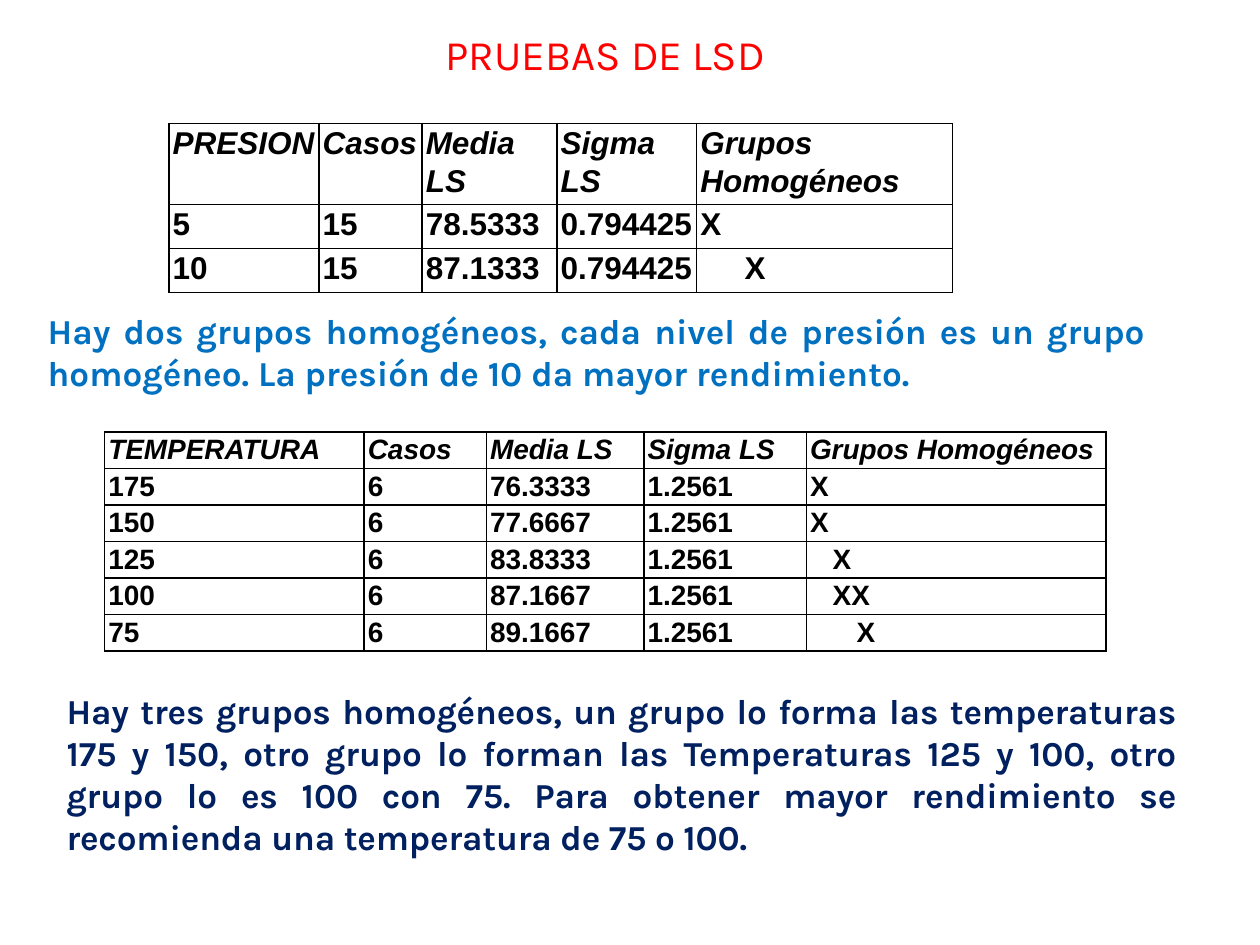
from lxml.etree import SubElement
from pptx import Presentation
from pptx.dml.color import RGBColor
from pptx.enum.text import MSO_ANCHOR, PP_ALIGN
from pptx.oxml.ns import qn
from pptx.util import Inches, Pt

BLACK = RGBColor(0x00, 0x00, 0x00)
RED = RGBColor(0xFF, 0x00, 0x00)
BLUE = RGBColor(0x00, 0x70, 0xC0)
NAVY = RGBColor(0x00, 0x20, 0x60)


def write_text(tf, text, size, color=BLACK, font="Karla", bold=False, italic=False,
               align=PP_ALIGN.LEFT, line_spacing=None, spacing=0):
    tf.word_wrap = True
    p = tf.paragraphs[0]
    p.alignment = align
    p.line_spacing = line_spacing
    r = p.add_run()
    r.text = text
    r.font.name = font
    r.font.size = Pt(size)
    r.font.bold = bold
    r.font.italic = italic
    r.font.color.rgb = color
    if spacing:
        r.font._element.set("spc", str(spacing))


def set_borders(cell):
    tcPr = cell._tc.get_or_add_tcPr()
    for side in ("a:lnL", "a:lnR", "a:lnT", "a:lnB"):
        ln = SubElement(tcPr, qn(side), w=str(Pt(1)))
        fill = SubElement(ln, qn("a:solidFill"))
        SubElement(fill, qn("a:srgbClr"), val=str(BLACK))


prs = Presentation()
prs.slide_width = Inches(10)
prs.slide_height = Inches(7.5)
s = prs.slides.add_slide(prs.slide_layouts[5])

title = s.shapes.title
title.left, title.top = Inches(1.38), Inches(0.18)
title.width, title.height = Inches(6.85), Inches(0.5)
title.text_frame.vertical_anchor = MSO_ANCHOR.TOP
write_text(title.text_frame, "PRUEBAS DE LSD", 24, color=RED, align=PP_ALIGN.CENTER)

notes = [
    (0.28, 2.41, 8.91, 0.77, BLUE, 0,
     "Hay dos grupos homogéneos, cada nivel de presión es un grupo homogéneo. "
     "La presión de 10 da mayor rendimiento."),
    (0.43, 5.42, 9, 1.78, NAVY, -10,
     "Hay tres grupos homogéneos, un grupo lo forma las temperaturas 175 y 150, "
     "otro grupo lo forman las Temperaturas 125 y 100, otro grupo lo es 100 con 75. "
     "Para obtener mayor rendimiento se recomienda una temperatura de 75 o 100."),
]
for left, top, width, height, color, spacing, text in notes:
    sp = s.shapes.add_textbox(Inches(left), Inches(top), Inches(width), Inches(height))
    write_text(sp.text_frame, text, 20, color=color, bold=True,
               align=PP_ALIGN.JUSTIFY, spacing=spacing)

headings = ["Casos", "Media LS", "Sigma LS", "Grupos Homogéneos"]
pressure_rows = [
    ["PRESION", *headings],
    ["5", "15", "78.5333", "0.794425", "X"],
    ["10", "15", "87.1333", "0.794425", "X"],
]
temperature_rows = [
    ["TEMPERATURA", *headings],
    ["175", "6", "76.3333", "1.2561", "X"],
    ["150", "6", "77.6667", "1.2561", "X"],
    ["125", "6", "83.8333", "1.2561", "X"],
    ["100", "6", "87.1667", "1.2561", "XX"],
    ["75", "6", "89.1667", "1.2561", "X"],
]
tables = [
    (0.83, 3.43, [2.06, 0.97, 1.25, 1.29, 2.38], [0.29] * 6, 16,
     temperature_rows, [0, 0, 0, 0.18, 0.18, 0.37]),
    (1.34, 0.98, [1.19, 0.82, 1.07, 1.11, 2.03], [0.64, 0.35, 0.35], 18,
     pressure_rows, [0, 0, 0.35]),
]
for left, top, widths, heights, size, rows, group_indents in tables:
    table = s.shapes.add_table(len(rows), len(widths), Inches(left), Inches(top),
                               Inches(sum(widths)), Inches(sum(heights))).table
    table.first_row = False
    table.horz_banding = False
    for column, width in zip(table.columns, widths):
        column.width = Inches(width)
    for i, values in enumerate(rows):
        table.rows[i].height = Inches(heights[i])
        for j, value in enumerate(values):
            cell = table.cell(i, j)
            indent = group_indents[i] if j == len(values) - 1 else 0
            cell.margin_left = Inches(0.03 + indent)
            cell.margin_right = Inches(0.01)
            cell.margin_top = cell.margin_bottom = 0
            set_borders(cell)
            cell.fill.background()
            write_text(cell.text_frame, value, size, font="Arial", bold=True,
                       italic=i == 0, line_spacing=1.07)

prs.save("out.pptx")
